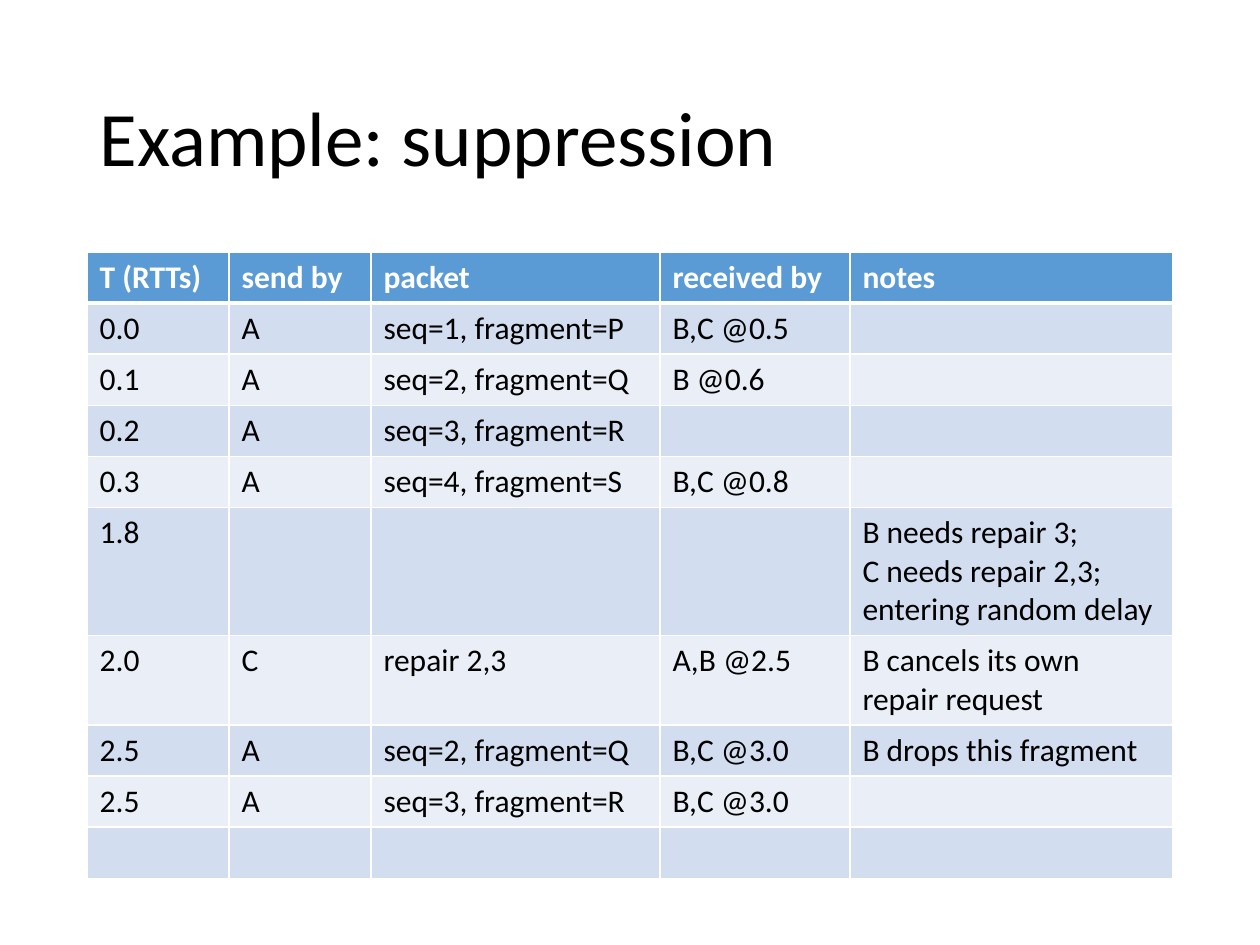
from dataclasses import dataclass

from lxml.etree import SubElement
from pptx import Presentation
from pptx.dml.color import RGBColor
from pptx.enum.text import MSO_ANCHOR, PP_ALIGN
from pptx.oxml.ns import qn
from pptx.slide import Slide
from pptx.util import Pt

EMU_PER_PX = 914400 / 126


def px(length):
    return round(length * EMU_PER_PX)


def color(value):
    return RGBColor.from_string(value)


@dataclass
class SlideBuilder:
    page: Slide
    font: str = "Calibri"
    ink: str = "000000"
    paper: str = "FFFFFF"
    header_fill: str = "5B9BD5"
    band_fills: tuple = ("D2DEEF", "EAEFF7")

    def format_paragraph(self, para, size, ink, bold=False):
        para.font.name = self.font
        para.font.size = Pt(size)
        para.font.bold = bold
        para.font.color.rgb = color(ink)

    def add_title(self, text, left, top, width, height):
        title = self.page.shapes.title
        title.left, title.top = px(left), px(top)
        title.width, title.height = px(width), px(height)
        title.text_frame.text = text
        title.text_frame.vertical_anchor = MSO_ANCHOR.MIDDLE
        para = title.text_frame.paragraphs[0]
        para.alignment = PP_ALIGN.LEFT
        para.line_spacing = 0.9
        self.format_paragraph(para, 44, self.ink)

    def add_borders(self, cell, top, bottom):
        properties = cell._tc.get_or_add_tcPr()
        for side, points in (("L", 1), ("R", 1), ("T", top), ("B", bottom)):
            line = SubElement(properties, qn(f"a:ln{side}"), w=str(Pt(points)))
            fill = SubElement(line, qn("a:solidFill"))
            SubElement(fill, qn("a:srgbClr"), val=self.paper)

    def fill_cell(self, cell, text, row_index):
        is_header = row_index == 0
        self.add_borders(cell, 3 if row_index == 1 else 1, 3 if is_header else 1)
        cell.fill.solid()
        band = self.band_fills[(row_index - 1) % 2]
        cell.fill.fore_color.rgb = color(self.header_fill if is_header else band)
        cell.text = text
        for para in cell.text_frame.paragraphs:
            self.format_paragraph(para, 18, self.paper if is_header else self.ink, is_header)

    def add_table(self, rows, left, top, height, column_widths, row_height):
        frame = self.page.shapes.add_table(
            len(rows), len(column_widths),
            px(left), px(top), px(sum(column_widths)), px(height),
        )
        table = frame.table
        for column, width in zip(table.columns, column_widths):
            column.width = px(width)
        for row_index, (row, texts) in enumerate(zip(table.rows, rows)):
            row.height = px(row_height)
            for cell, text in zip(row.cells, texts):
                self.fill_cell(cell, text, row_index)
        frame.height = px(height)


def main():
    deck = Presentation()
    deck.slide_width, deck.slide_height = px(1260), px(945)
    builder = SlideBuilder(deck.slides.add_slide(deck.slide_layouts[5]))
    builder.add_title("Example: suppression", 87, 50, 1086, 183)
    repair_needs = "B needs repair 3;\nC needs repair 2,3;\nentering random delay"
    rows = [
        ("T (RTTs)", "send by", "packet", "received by", "notes"),
        ("0.0", "A", "seq=1, fragment=P", "B,C @0.5", ""),
        ("0.1", "A", "seq=2, fragment=Q", "B @0.6", ""),
        ("0.2", "A", "seq=3, fragment=R", "", ""),
        ("0.3", "A", "seq=4, fragment=S", "B,C @0.8", ""),
        ("1.8", "", "", "", repair_needs),
        ("2.0", "C", "repair 2,3", "A,B @2.5", "B cancels its own repair request"),
        ("2.5", "A", "seq=2, fragment=Q", "B,C @3.0", "B drops this fragment"),
        ("2.5", "A", "seq=3, fragment=R", "B,C @3.0", ""),
        ("", "", "", "", ""),
    ]
    builder.add_table(rows, 87, 252, 622, (142, 142, 289, 190, 323), 51)
    deck.save("out.pptx")


if __name__ == "__main__":
    main()
